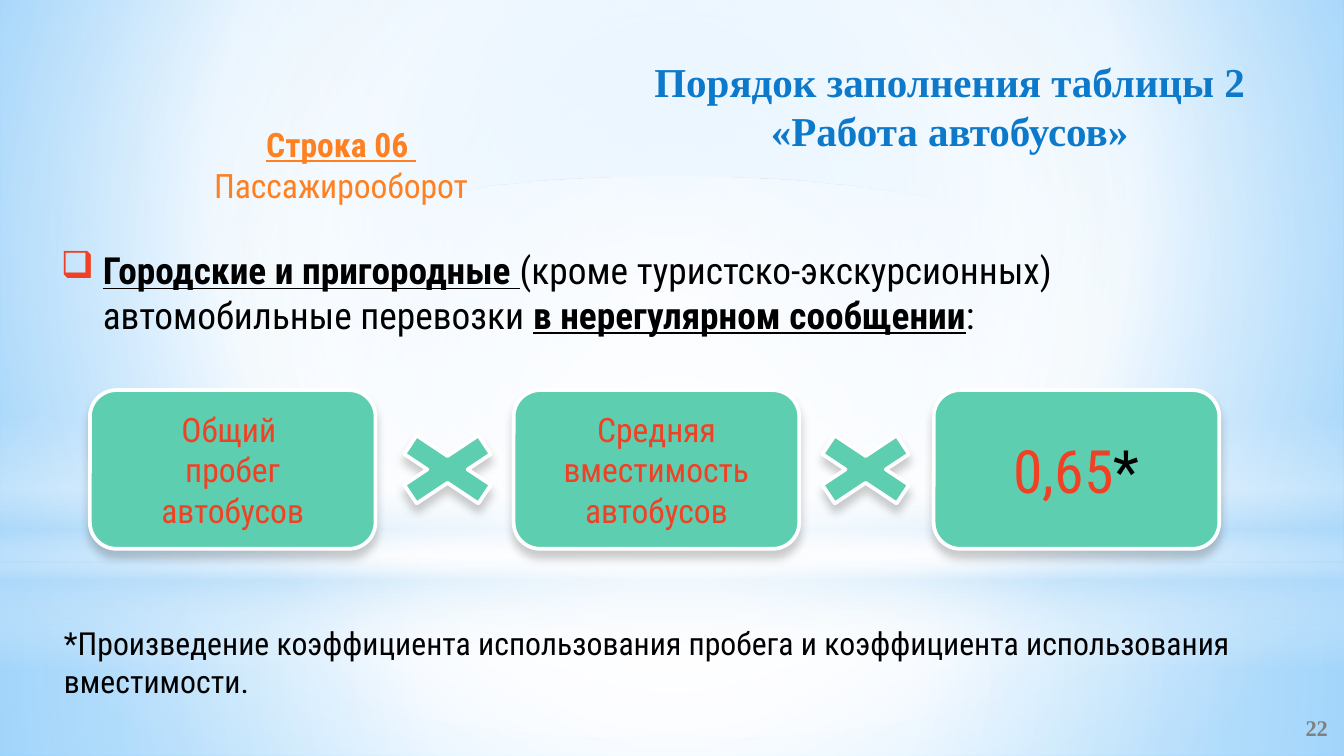
from lxml.etree import SubElement
from pptx import Presentation
from pptx.dml.color import RGBColor
from pptx.enum.shapes import MSO_SHAPE
from pptx.enum.text import MSO_ANCHOR, PP_ALIGN
from pptx.oxml.ns import qn
from pptx.util import Pt

BLUE = RGBColor(0x0D, 0x79, 0xCA)
GRAY = RGBColor(0x80, 0x80, 0x80)
ORANGE = RGBColor(0xFF, 0x80, 0x21)
RED = RGBColor(0xF1, 0x41, 0x24)
GREEN = RGBColor(0x5D, 0xCE, 0xAF)
BLACK = RGBColor(0, 0, 0)
WHITE = RGBColor(0xFF, 0xFF, 0xFF)
SANS, SERIF = "Roboto Condensed", "Times New Roman"
W, H = 720, 405


def gradient(fill, root, stops, focus=None):
    """Stops are (position %, colour, opacity %); without a focus it runs top to bottom."""
    fill.gradient()
    grad = root.find(".//" + qn("a:gradFill"))
    for child in list(grad):
        grad.remove(child)
    gs_list = SubElement(grad, qn("a:gsLst"))
    for pos, color, alpha in stops:
        gs = SubElement(gs_list, qn("a:gs"), pos=str(pos * 1000))
        clr = SubElement(gs, qn("a:srgbClr"), val=color)
        SubElement(clr, qn("a:alpha"), val=str(alpha * 1000))
    if focus:
        path = SubElement(grad, qn("a:path"), path="circle")
        sides = {k: str(v * 1000) for k, v in zip("ltrb", focus)}
        SubElement(path, qn("a:fillToRect"), **sides)
    else:
        SubElement(grad, qn("a:lin"), ang="5400000", scaled="0")


def write(shape, runs, align=PP_ALIGN.LEFT, anchor=MSO_ANCHOR.TOP, **base):
    """Fill a shape with one paragraph; runs are (text, format changes), None is a line break."""
    tf = shape.text_frame
    tf.word_wrap = True
    tf.vertical_anchor = anchor
    p = tf.paragraphs[0]
    p.alignment = align
    for run in runs:
        if run is None:
            p.add_line_break()
            continue
        text, changes = run
        r = p.add_run()
        r.text = text
        for key, value in {**base, **changes}.items():
            if key == "color":
                r.font.color.rgb = value
            else:
                setattr(r.font, key, value)
    return p


prs = Presentation()
prs.slide_width, prs.slide_height = Pt(W), Pt(H)
s = prs.slides.add_slide(prs.slide_layouts[5])

# Background gradient, with light overlays moved to the slide master
gradient(s.background.fill, s._element,
         [(0, "9ED5FF", 100), (60, "FFFFFF", 100), (100, "5BB9FF", 100)],
         (20, 10, 20, 60))
CENTER = (50, 50, 50, 50)
overlays = [
    (MSO_SHAPE.RECTANGLE, 301.5, 103.5, CENTER,
     [(0, "FFFFFF", 91), (37, "FFFFFF", 76), (100, "B4DCFA", 79)]),
    (MSO_SHAPE.RECTANGLE, 0, 301.5, CENTER,
     [(0, "FFFFFF", 89), (48, "FFFFFF", 62), (100, "B4DCFA", 79)]),
    (MSO_SHAPE.RECTANGLE, 222.5, 135, None,
     [(0, "FFFFFF", 0), (29, "FFFFFF", 30), (45, "B4DCFA", 40),
      (55, "FFFFFF", 26), (65, "B4DCFA", 60), (100, "FFFFFF", 0)]),
    (MSO_SHAPE.OVAL, 94.5, 301.5, CENTER,
     [(0, "FFFFFF", 100), (56, "FFFFFF", 0)]),
]
for i, (kind, top, height, focus, stops) in enumerate(overlays):
    sp = s.shapes.add_shape(kind, 0, Pt(top), Pt(W), Pt(height))
    sp.shadow.inherit = False
    sp.line.fill.background()
    gradient(sp.fill, sp._element, stops, focus)
    sp._element.nvSpPr.cNvPr.set("id", str(20 + i))
    prs.slide_master.shapes._spTree.append(sp._element)

# Title
title = s.shapes.title
title.left, title.top, title.width, title.height = Pt(332), Pt(26.6), Pt(353.5), Pt(60.5)
write(title, [("Порядок заполнения таблицы 2", {}), None, ("«Работа автобусов»", {})],
      PP_ALIGN.CENTER, name=SERIF, size=Pt(22), bold=True, color=BLUE)

# Slide number
sp = s.shapes.add_textbox(Pt(574.5), Pt(379.2), Pt(144), Pt(21.5))
write(sp, [("22", {})], PP_ALIGN.RIGHT, MSO_ANCHOR.MIDDLE,
      name=SERIF, size=Pt(12), bold=True, color=GRAY)

# Row heading
strong = {"bold": True, "underline": True}
sp = s.shapes.add_textbox(Pt(92), Pt(63), Pt(181.5), Pt(51))
p = write(sp, [("Строка 06 ", strong), None, ("Пассажирооборот", {})],
          PP_ALIGN.CENTER, name=SANS, size=Pt(18), color=ORANGE)
p.space_before = Pt(6)

# Bulleted statement
sp = s.shapes.add_textbox(Pt(25.5), Pt(129), Pt(601), Pt(55.5))
p = write(sp, [("Городские и пригородные ", strong),
               ("(кроме туристско-экскурсионных) автомобильные перевозки ", {}),
               ("в нерегулярном сообщении", strong), (":", {})],
          name=SANS, size=Pt(20), color=BLACK)
pPr = p._p.get_or_add_pPr()
pPr.set("marL", str(Pt(22.5)))
pPr.set("indent", str(-Pt(22.5)))
SubElement(SubElement(pPr, qn("a:buClr")), qn("a:srgbClr"), val=str(RED))
SubElement(pPr, qn("a:buFont"), typeface="Wingdings", charset="2")
SubElement(pPr, qn("a:buChar"), char="q")  # hollow square in Wingdings

# Formula: three factors joined by multiplication signs
BOX, SIGN = MSO_SHAPE.ROUNDED_RECTANGLE, MSO_SHAPE.MATH_MULTIPLY
formula = [
    (BOX, 48.2, 18, [("Общий ", {}), None, ("пробег автобусов", {})]),
    (SIGN, 201.5, 18, []),
    (BOX, 275.2, 18, [("Средняя вместимость автобусов", {})]),
    (SIGN, 425.5, 18, []),
    (BOX, 500.2, 32, [("0,65", {}), ("*", {"color": BLACK})]),
]
for kind, left, size, runs in formula:
    top, width, height = (209, 153, 85) if kind == BOX else (226, 76.5, 51)
    sp = s.shapes.add_shape(kind, Pt(left), Pt(top), Pt(width), Pt(height))
    sp.fill.solid()
    sp.fill.fore_color.rgb = GREEN
    sp.line.color.rgb = WHITE
    sp.line.width = Pt(2)
    SubElement(sp.line._get_or_add_ln(), qn("a:round"))
    sp.shadow.inherit = False
    shadow = SubElement(sp._element.spPr.find(qn("a:effectLst")), qn("a:outerShdw"),
                        blurRad=str(Pt(5)), dist=str(Pt(4)), dir="5400000", rotWithShape="0")
    clr = SubElement(shadow, qn("a:srgbClr"), val="000000")
    SubElement(clr, qn("a:alpha"), val="20000")
    if runs:
        sp.text_frame.margin_left = sp.text_frame.margin_right = Pt(10)
        write(sp, runs, PP_ALIGN.CENTER, MSO_ANCHOR.MIDDLE,
              name=SANS, size=Pt(size), color=RED)

# Footnote
sp = s.shapes.add_textbox(Pt(27.2), Pt(330.5), Pt(656), Pt(48))
write(sp, [("*Произведение коэффициента использования пробега и коэффициента "
            "использования вместимости.", {})],
      name=SANS, size=Pt(17), color=BLACK)

prs.save("out.pptx")
